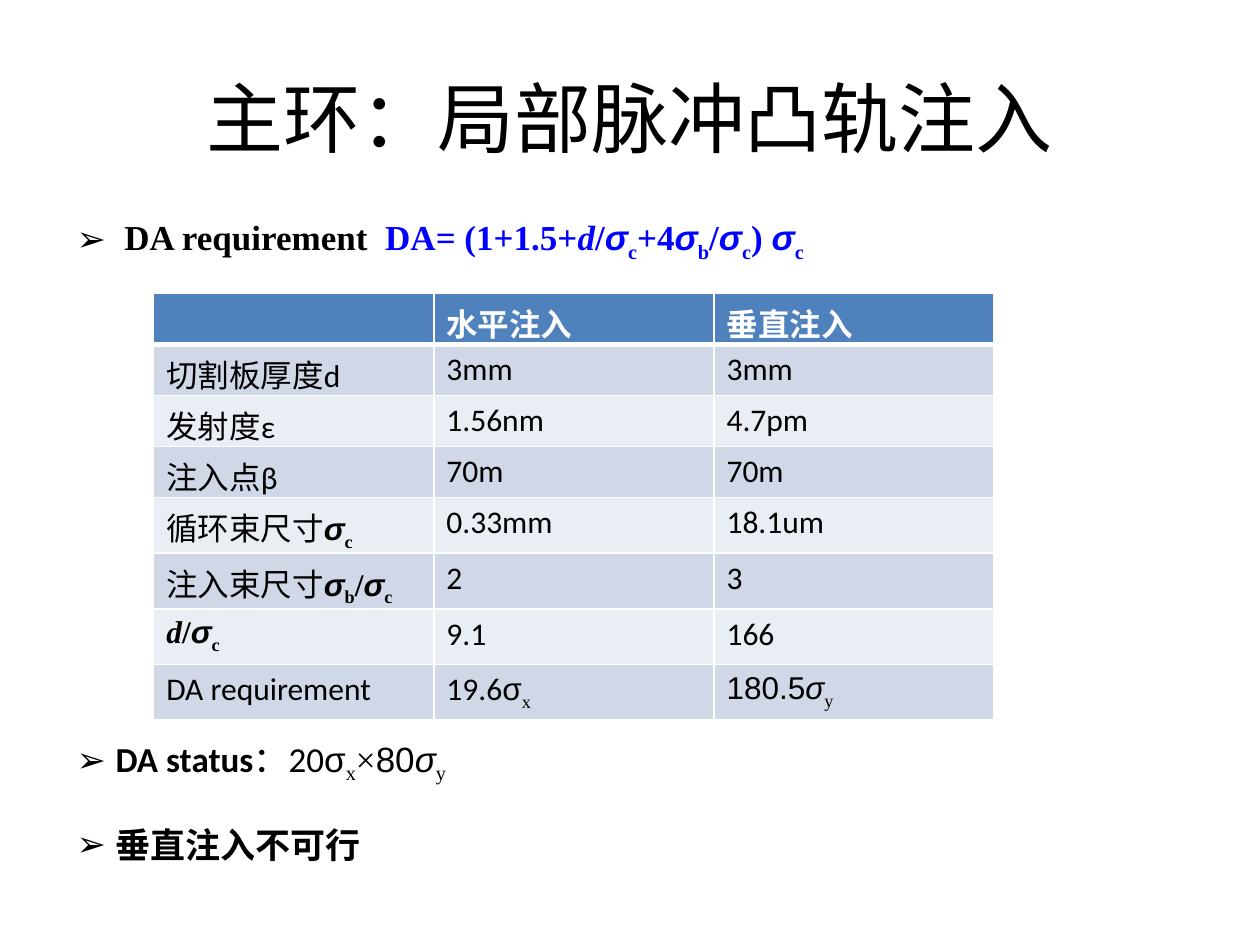
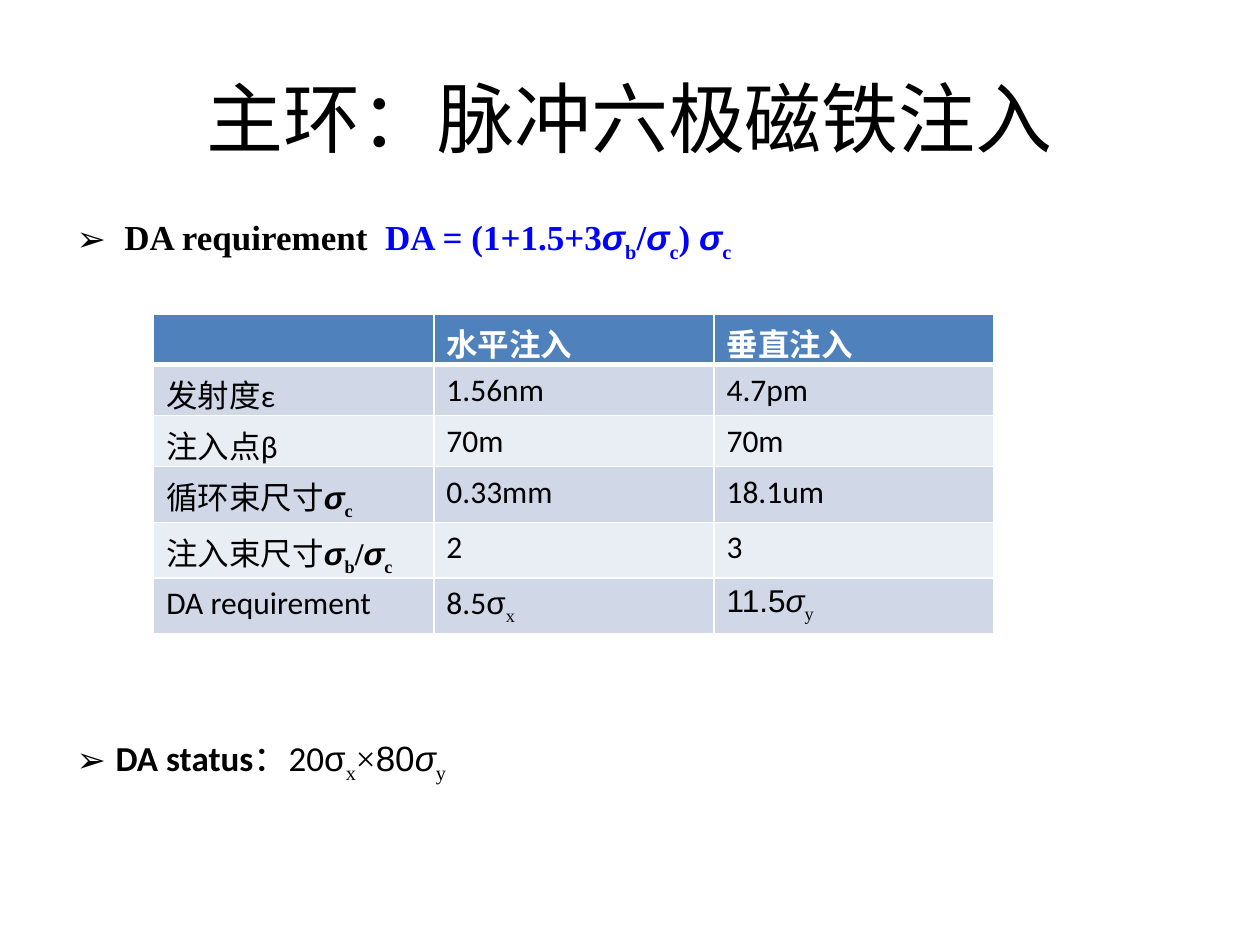
from pptx import Presentation
from pptx.dml.color import RGBColor
from pptx.enum.lang import MSO_LANGUAGE_ID as Language
from pptx.enum.text import MSO_ANCHOR as Anchor, PP_ALIGN as Align
from pptx.oxml import parse_xml
from pptx.oxml.ns import nsdecls
from pptx.util import Inches, Pt

COLUMNS, ROWS = 100, 75
SANS, SERIF, SYMBOL = "Calibri", "Times New Roman", "Arial"
BLACK, WHITE, BLUE = "000000", "FFFFFF", "0000FF"
HEADER, BANDS = "4F81BD", ("D0D8E8", "E9EDF4")
BOLD = {"bold": True}
FORMULA = {"name": SERIF, "bold": True, "color": BLUE}
TERM = {"name": SERIF, "bold": True}


def color(code):
    return RGBColor.from_string(code)


def sigma(index, base, italic=True):
    """Spans of a sigma with a lowered index, both in the base format."""
    return [("σ", {**base, "name": SYMBOL, "italic": italic}),
            (index, {**base, "name": SERIF, "baseline": -25000})]


def ratio(base):
    return [*sigma("b", base), ("/", base), *sigma("c", base)]


def beam_x(value):
    return [(value, {}), *sigma("x", {}, italic=False)]


def beam_y(value):
    return [(value, {"name": SYMBOL}), *sigma("y", {})]


class Deck:
    """Holds the file, the current slide and the shared style."""

    def __init__(self):
        self.file = Presentation()
        self.file.slide_width, self.file.slide_height = Inches(10), Inches(7.5)
        self.page = None

    def place(self, left, top, width, height):
        """Turn grid columns and rows into lengths."""
        column = self.file.slide_width / COLUMNS
        row = self.file.slide_height / ROWS
        return [int(count * unit) for count, unit in
                ((left, column), (top, row), (width, column), (height, row))]

    def add_spans(self, para, spans, **base):
        for text, changes in spans:
            style = {"name": SANS, "color": BLACK, **base, **changes}
            span = para.add_run()
            span.text = text
            span.font.color.rgb = color(style.pop("color"))
            span.font.size = Pt(style.pop("size"))
            if any(letter > "⺀" for letter in text):
                span.font.language_id = Language.SIMPLIFIED_CHINESE
            properties = span._r.get_or_add_rPr()
            for key in ("baseline", "spc"):
                if key in style:
                    properties.set(key, str(style.pop(key)))
            for key, value in style.items():
                setattr(span.font, key, value)

    def text_box(self, *area):
        box = self.page.shapes.add_textbox(*self.place(*area))
        box.text_frame.word_wrap = True
        return box.text_frame

    def start(self, title):
        """Add a slide with its title."""
        self.page = self.file.slides.add_slide(self.file.slide_layouts[6])
        frame = self.text_box(5, 3, 90, 12.5)
        frame.vertical_anchor = Anchor.MIDDLE
        para = frame.paragraphs[0]
        para.alignment = Align.CENTER
        self.add_spans(para, [(title, {})], size=44)

    def bullets(self, area, items, indent, line_spacing=1.0, gap=0):
        frame = self.text_box(*area)
        for number, spans in enumerate(items):
            para = frame.add_paragraph() if number else frame.paragraphs[0]
            properties = para._p.get_or_add_pPr()
            properties.set("marL", str(Inches(indent)))
            properties.set("indent", str(-Inches(indent)))
            properties.append(parse_xml(
                f'<a:buFont {nsdecls("a")} typeface="{SYMBOL}"/>'))
            properties.append(parse_xml(
                f'<a:buChar {nsdecls("a")} char="➢"/>'))
            para.line_spacing = line_spacing
            if number:
                para.space_before = Pt(gap)
            self.add_spans(para, spans, size=20)

    def requirement(self, formula):
        gap = (" ", {**TERM, "spc": 500})
        self.bullets((5.1, 15.5, 85, 5.4),
                     [[("DA requirement", TERM), gap, *formula]],
                     indent=0.38, line_spacing=1.3)

    def status(self, *conclusions):
        limits = [("DA status", BOLD), ("：", {}), *beam_x("20"),
                  ("×", {"name": SERIF}), *beam_y("80")]
        self.bullets((5.1, 58, 66.9, 10.8 if conclusions else 7.4),
                     [limits, *([(text, BOLD)] for text in conclusions)],
                     indent=0.31, gap=22)

    def borders(self, cell, top, bottom):
        properties = cell._tc.get_or_add_tcPr()
        for side, width in (("L", 1), ("R", 1), ("T", top), ("B", bottom)):
            properties.append(parse_xml(
                f'<a:ln{side} {nsdecls("a")} w="{Pt(width)}"><a:solidFill>'
                f'<a:srgbClr val="{WHITE}"/></a:solidFill></a:ln{side}>'))

    def table(self, top, body):
        """Draw the table; a cell is a string or a list of spans."""
        rows = [("", "水平注入", "垂直注入"), *body]
        area = self.place(12.2, top, 66.7, 4.05 * len(rows))
        grid = self.page.shapes.add_table(len(rows), 3, *area).table
        for number, row in enumerate(rows):
            head = number == 0
            fill = HEADER if head else BANDS[(number - 1) % 2]
            for cell, content in zip(grid.rows[number].cells, row):
                self.borders(cell, 3 if number == 1 else 1, 3 if head else 1)
                cell.fill.solid()
                cell.fill.fore_color.rgb = color(fill)
                spans = [(content, {})] if isinstance(content, str) else content
                if content:
                    self.add_spans(cell.text_frame.paragraphs[0], spans,
                                   size=18, bold=head,
                                   color=WHITE if head else BLACK)


THICKNESS = ("切割板厚度d", "3mm", "3mm")
BEAM = [("发射度ε", "1.56nm", "4.7pm"),
        ("注入点β", "70m", "70m"),
        ([("循环束尺寸", {}), *sigma("c", TERM)], "0.33mm", "18.1um"),
        ([("注入束尺寸", {}), *ratio(TERM)], "2", "3")]
PLATE = ([("d", {**TERM, "italic": True}), ("/", TERM), *sigma("c", TERM)],
         "9.1", "166")
CLOSING = [(") ", FORMULA), *sigma("c", FORMULA)]


def need(horizontal, vertical):
    return "DA requirement", beam_x(horizontal), beam_y(vertical)


def main():
    deck = Deck()

    deck.start("主环：局部脉冲凸轨注入")
    deck.requirement([("DA= (1+1.5+", FORMULA),
                      ("d", {**FORMULA, "italic": True}), ("/", FORMULA),
                      *sigma("c", FORMULA), ("+4", FORMULA),
                      *ratio(FORMULA), *CLOSING])
    deck.table(23.3, [THICKNESS, *BEAM, PLATE, need("19.6", "180.5")])
    deck.status("垂直注入不可行")

    deck.start("主环：脉冲六极磁铁注入")
    deck.requirement([("DA = (1+1.5+3", FORMULA), *ratio(FORMULA), *CLOSING])
    deck.table(24.9, [*BEAM, need("8.5", "11.5")])
    deck.status()

    deck.file.save("out.pptx")


if __name__ == "__main__":
    main()
